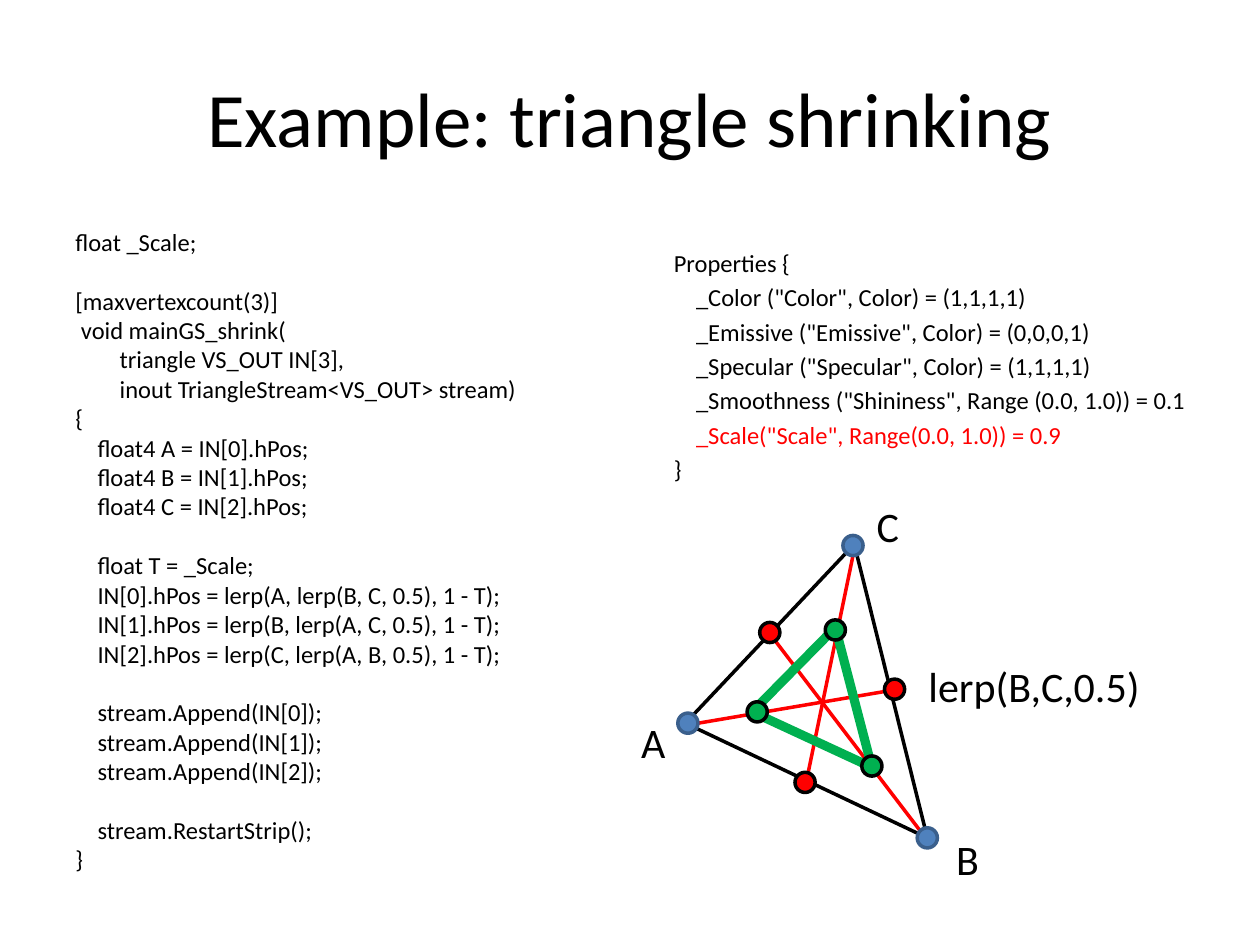
"""Build the slide on shrinking a triangle in a geometry shader."""
from lxml import etree
from pptx import Presentation
from pptx.dml.color import RGBColor
from pptx.enum.shapes import MSO_CONNECTOR, MSO_SHAPE
from pptx.enum.text import MSO_ANCHOR, PP_ALIGN
from pptx.oxml.ns import qn
from pptx.util import Inches, Pt

STRAIGHT = MSO_CONNECTOR.STRAIGHT
OVAL = MSO_SHAPE.OVAL
LEFT, CENTER = PP_ALIGN.LEFT, PP_ALIGN.CENTER
TOP, MIDDLE = MSO_ANCHOR.TOP, MSO_ANCHOR.MIDDLE

COLORS = {
    "black": "000000",
    "red": "FF0000",
    "green": "00B050",
    "blue": "4F81BD",
    "dark blue": "3A5F8C",
}
FONT = "Calibri"
DOT_SIZE = 0.16
INDENT_STEP = 0.176
LINE_HEIGHT = 16.8

presentation = Presentation()
presentation.slide_width = Inches(10)
presentation.slide_height = Inches(7.5)
slide = presentation.slides.add_slide(presentation.slide_layouts[6])


def rgb(name):
    return RGBColor.from_string(COLORS[name])


def add_text(lines, box, size=14, align=LEFT, anchor=TOP, wrap=True):
    """Add a text box from (text, indent level, space before, colour) lines."""
    shape = slide.shapes.add_textbox(*map(Inches, box))
    frame = shape.text_frame
    frame.word_wrap = wrap
    frame.vertical_anchor = anchor
    for index, (text, level, space, color) in enumerate(lines):
        paragraph = frame.paragraphs[0] if index == 0 else frame.add_paragraph()
        paragraph.alignment = align
        paragraph.space_before = Pt(space)
        if level:
            margin = Inches(level * INDENT_STEP)
            paragraph._p.get_or_add_pPr().set("marL", str(margin))
        run = paragraph.add_run()
        run.text = text
        run.font.name = FONT
        run.font.size = Pt(size)
        run.font.color.rgb = rgb(color)


add_text([("Example: triangle shrinking", 0, 0, "black")], (0.5, 0.3, 9, 1.25),
         size=44, align=CENTER, anchor=MIDDLE)

shader_blocks = [
    [("float _Scale;", 0)],
    [
        ("[maxvertexcount(3)]", 0),
        (" void mainGS_shrink(", 0),
        ("triangle VS_OUT IN[3],", 2),
        ("inout TriangleStream<VS_OUT> stream)", 2),
        ("{", 0),
        ("float4 A = IN[0].hPos;", 1),
        ("float4 B = IN[1].hPos;", 1),
        ("float4 C = IN[2].hPos;", 1),
    ],
    [
        ("float T = _Scale;", 1),
        ("IN[0].hPos = lerp(A, lerp(B, C, 0.5), 1 - T);", 1),
        ("IN[1].hPos = lerp(B, lerp(A, C, 0.5), 1 - T);", 1),
        ("IN[2].hPos = lerp(C, lerp(A, B, 0.5), 1 - T);", 1),
    ],
    [(f"stream.Append(IN[{index}]);", 1) for index in range(3)],
    [("stream.RestartStrip();", 1), ("}", 0)],
]
shader_lines = [
    (text, level, LINE_HEIGHT if block_index and line_index == 0 else 0, "black")
    for block_index, block in enumerate(shader_blocks)
    for line_index, (text, level) in enumerate(block)
]
add_text(shader_lines, (0.5, 1.75, 9, 5.58))

property_lines = [
    ("Properties {", 0, 0, "black"),
    ('_Color ("Color", Color) = (1,1,1,1)', 1, 2.8, "black"),
    ('_Emissive ("Emissive", Color) = (0,0,0,1)', 1, 2.8, "black"),
    ('_Specular ("Specular", Color) = (1,1,1,1)', 1, 2.8, "black"),
    ('_Smoothness ("Shininess", Range (0.0, 1.0)) = 0.1', 1, 2.8, "black"),
    ('_Scale("Scale", Range(0.0, 1.0)) = 0.9', 1, 2.8, "red"),
    ("}", 0, 2.8, "black"),
]
add_text(property_lines, (5.25, 1.92, 4.5, 2.42))

outer_corners = [(5.44, 5.74), (7.36, 6.65), (6.78, 4.32)]
inner_corners = [(5.97, 5.65), (6.92, 6.09), (6.63, 4.98)]
medians = [
    ((5.54, 5.74), (7.07, 5.48)),
    ((7.3, 6.59), (6.11, 5.03)),
    ((6.4, 6.2), (6.77, 4.41)),
]
segments = []
for corners, color, width in [(outer_corners, "black", 2), (inner_corners, "green", 5.25)]:
    for index in range(3):
        segments.append((corners[index - 1], corners[index], color, width))
    if corners is outer_corners:
        segments += [(start, end, "red", 2) for start, end in medians]

for start, end, color, width in segments:
    connector = slide.shapes.add_connector(STRAIGHT, *map(Inches, start + end))
    connector.line.color.rgb = rgb(color)
    connector.line.width = Pt(width)
    etree.SubElement(connector._element.spPr, qn("a:effectLst"))

dot_groups = [
    ("blue", "dark blue", [(5.38, 5.66), (7.28, 6.57), (6.69, 4.25)]),
    ("red", "black", [(7.02, 5.39), (6.03, 4.94), (6.31, 6.13)]),
    ("green", "black", [(5.93, 5.57), (6.84, 6), (6.55, 4.92)]),
]
for fill, outline, positions in dot_groups:
    for left, top in positions:
        dot = slide.shapes.add_shape(
            OVAL, Inches(left), Inches(top), Inches(DOT_SIZE), Inches(DOT_SIZE))
        dot.shadow.inherit = False
        dot.fill.solid()
        dot.fill.fore_color.rgb = rgb(fill)
        dot.line.color.rgb = rgb(outline)
        dot.line.width = Pt(2)

labels = [
    ("A", 4.99, 5.64, 0.48),
    ("B", 7.49, 6.57, 0.48),
    ("C", 6.86, 3.92, 0.48),
    ("lerp(B,C,0.5)", 7.27, 5.19, 2.03),
]
for text, left, top, width in labels:
    add_text([(text, 0, 0, "black")], (left, top, width, 0.5), size=24)

presentation.save("out.pptx")
